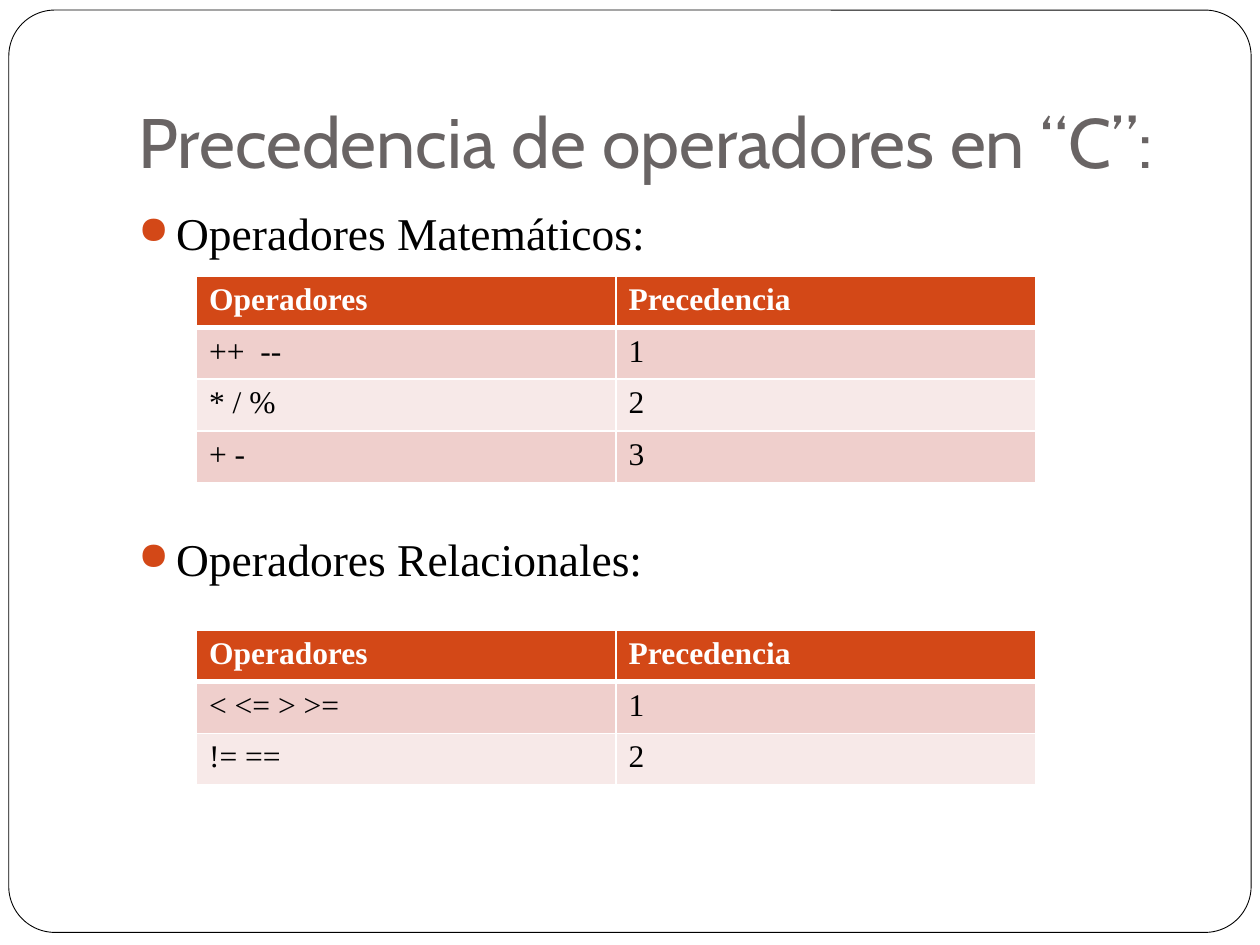
import pptx
import pptx.dml.color
import pptx.enum.shapes
import pptx.enum.text
import pptx.oxml.ns
import pptx.util
from lxml import etree
from pptx.util import Inches

RGBColor = pptx.dml.color.RGBColor
WHITE = RGBColor(0xFF, 0xFF, 0xFF)
BLACK = RGBColor(0, 0, 0)
GRAY = RGBColor(0x69, 0x64, 0x64)
ORANGE = RGBColor(0xD3, 0x48, 0x17)
ROSE = RGBColor(0xEF, 0xCF, 0xCC)
PALE_ROSE = RGBColor(0xF7, 0xE9, 0xE8)
TITLE_FONT = "Cabin"
BODY_FONT = "Times New Roman"
HEADER = ("Operadores", "Precedencia")
MATH_ROWS = (("++  --", "1"), ("* / %", "2"), ("+ -", "3"))
RELATIONAL_ROWS = (("< <= > >=", "1"), ("!= ==", "2"))


def set_font(paragraph, name, size, color, bold=False):
    """Apply one font to a whole paragraph."""
    font = paragraph.font
    font.name = name
    font.size = pptx.util.Pt(size)
    font.color.rgb = color
    font.bold = bold


def add_element(parent, tag, **attributes):
    """Append a DrawingML element to its parent."""
    return etree.SubElement(parent, pptx.oxml.ns.qn(tag), attributes)


def add_frame(slide):
    """Draw the rounded frame around the slide."""
    frame = slide.shapes.add_shape(
        pptx.enum.shapes.MSO_SHAPE.ROUNDED_RECTANGLE,
        Inches(0.07), Inches(0.08), Inches(9.86), Inches(7.32))
    frame.adjustments[0] = 0.05
    frame.shadow.inherit = False
    frame.fill.solid()
    frame.fill.fore_color.rgb = WHITE
    frame.line.color.rgb = BLACK
    frame.line.width = pptx.util.Pt(0.5)


def add_title(slide, text):
    """Write the slide title, resting on the bottom of its box."""
    title = slide.shapes.add_textbox(
        Inches(1), Inches(0.3), Inches(8.5), Inches(1.25)).text_frame
    title.word_wrap = True
    title.vertical_anchor = pptx.enum.text.MSO_ANCHOR.BOTTOM
    title.margin_bottom = Inches(0.1)
    title.text = text
    set_font(title.paragraphs[0], TITLE_FONT, 40, GRAY)


def add_headings(slide, headings):
    """Write bulleted headings, given as text and space before in points."""
    body = slide.shapes.add_textbox(
        Inches(1), Inches(1.58), Inches(8.5), Inches(5)).text_frame
    body.word_wrap = True
    for index, (text, space) in enumerate(headings):
        heading = body.add_paragraph() if index else body.paragraphs[0]
        heading.text = text
        heading.space_before = pptx.util.Pt(space)
        properties = heading._p.get_or_add_pPr()
        properties.set("marL", str(Inches(0.3)))
        properties.set("indent", str(-Inches(0.3)))
        add_element(add_element(properties, "a:buClr"), "a:srgbClr", val=str(ORANGE))
        add_element(properties, "a:buSzPct", val="85000")
        add_element(properties, "a:buChar", char="●")
        set_font(heading, BODY_FONT, 26, BLACK)


def set_borders(cell, is_header):
    """Give a cell white borders, thicker below the header."""
    widths = {"a:lnL": 1, "a:lnR": 1}
    if is_header:
        widths["a:lnT"] = 1
    widths["a:lnB"] = 3 if is_header else 1
    properties = cell._tc.get_or_add_tcPr()
    for tag, width in widths.items():
        border = add_element(properties, tag, w=str(pptx.util.Pt(width)))
        add_element(add_element(border, "a:solidFill"), "a:srgbClr", val=str(WHITE))


def add_precedence_table(slide, top, operator_rows):
    """Build a table of operators and their precedence."""
    rows = (HEADER, *operator_rows)
    row_height = Inches(0.41)
    table = slide.shapes.add_table(
        len(rows), len(HEADER), Inches(1.56), top,
        Inches(6.66), row_height * len(rows)).table
    for row_index, texts in enumerate(rows):
        table.rows[row_index].height = row_height
        is_header = row_index == 0
        band = ORANGE if is_header else (PALE_ROSE, ROSE)[row_index % 2]
        for column_index, text in enumerate(texts):
            cell = table.cell(row_index, column_index)
            set_borders(cell, is_header)
            cell.fill.solid()
            cell.fill.fore_color.rgb = band
            cell.text = text
            set_font(cell.text_frame.paragraphs[0], BODY_FONT, 18,
                     WHITE if is_header else BLACK, is_header)


def main():
    """Build the operator precedence slide."""
    presentation = pptx.Presentation()
    presentation.slide_width = Inches(10)
    presentation.slide_height = Inches(7.5)
    slide = presentation.slides.add_slide(presentation.slide_layouts[6])
    add_frame(slide)
    add_title(slide, "Precedencia de operadores en “C”:")
    add_headings(slide, (("Operadores Matemáticos:", 5.8),
                         ("Operadores Relacionales:", 155)))
    add_precedence_table(slide, Inches(2.19), MATH_ROWS)
    add_precedence_table(slide, Inches(5), RELATIONAL_ROWS)
    presentation.save("out.pptx")


if __name__ == "__main__":
    main()
